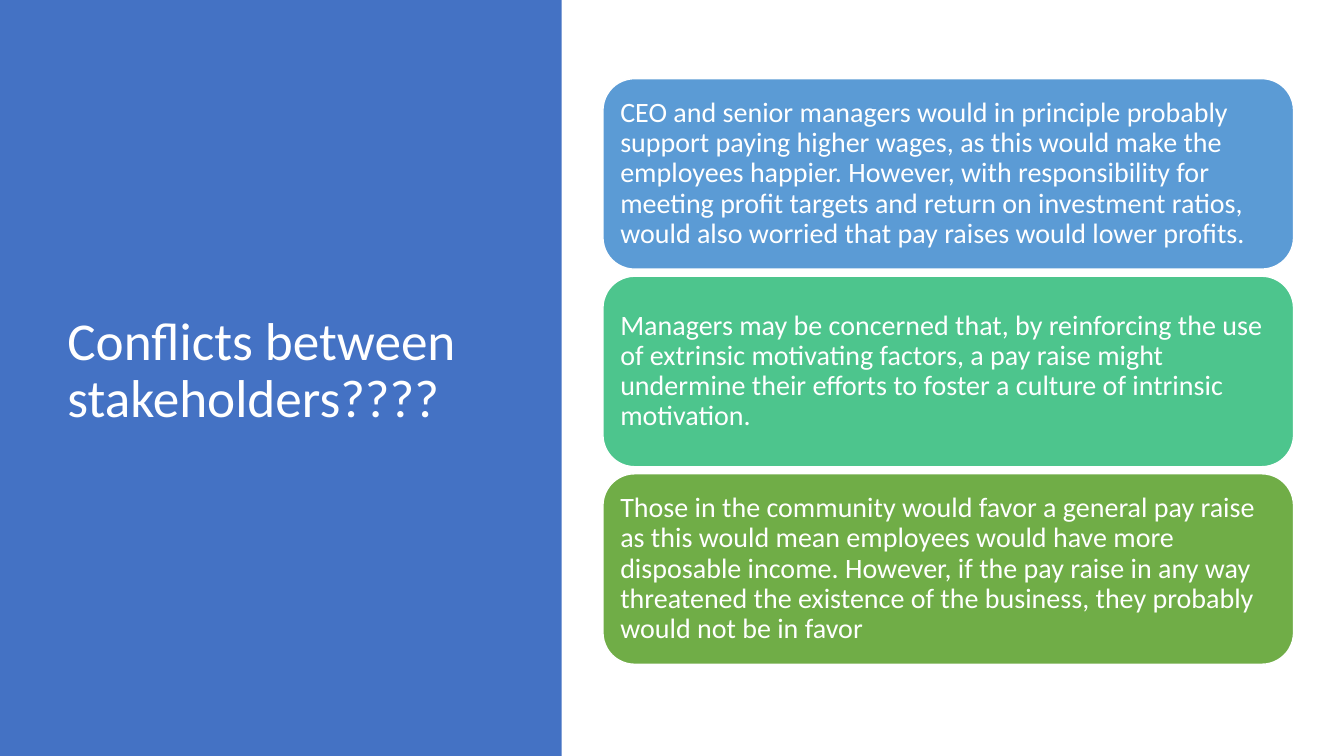
from dataclasses import dataclass

from pptx import Presentation
from pptx.dml.color import RGBColor
from pptx.enum.shapes import MSO_SHAPE
from pptx.enum.text import MSO_ANCHOR, PP_ALIGN
from pptx.shapes.autoshape import Shape
from pptx.slide import Slide
from pptx.util import Emu, Pt

EMU_PER_PX = 9144
WHITE = RGBColor(0xFF, 0xFF, 0xFF)
PANEL_BLUE = RGBColor(0x44, 0x72, 0xC4)
LIGHT_BLUE = RGBColor(0x5B, 0x9B, 0xD5)
TEAL = RGBColor(0x4D, 0xC5, 0x8D)
GREEN = RGBColor(0x70, 0xAD, 0x47)

CARD_LEFT, CARD_TOP, CARD_WIDTH, CARD_HEIGHT, CARD_PITCH = 598, 78, 685, 189, 196


@dataclass(frozen=True)
class Box:
    left: int
    top: int
    width: int
    height: int

    def emu(self) -> list[Emu]:
        return [px(n) for n in (self.left, self.top, self.width, self.height)]


@dataclass(frozen=True)
class StakeholderCard:
    color: RGBColor
    text: str


CARDS = (
    StakeholderCard(
        LIGHT_BLUE,
        "CEO and senior managers would in principle probably support paying higher wages, "
        "as this would make the employees happier. However, with responsibility for meeting "
        "profit targets and return on investment ratios, would also worried that pay raises "
        "would lower profits.",
    ),
    StakeholderCard(
        TEAL,
        "Managers may be concerned that, by reinforcing the use of extrinsic motivating "
        "factors, a pay raise might undermine their efforts to foster a culture of "
        "intrinsic motivation.",
    ),
    StakeholderCard(
        GREEN,
        "Those in the community would favor a general pay raise as this would mean employees "
        "would have more disposable income. However, if the pay raise in any way threatened "
        "the existence of the business, they probably would not be in favor",
    ),
)


def px(length: int) -> Emu:
    return Emu(length * EMU_PER_PX)


def set_attributes(target: object, values: dict[str, object]) -> None:
    for name, value in values.items():
        setattr(target, name, value)


def write_text(shape: Shape, text: str, size: int, inset_x: int, inset_y: int) -> None:
    frame = shape.text_frame
    set_attributes(frame, {
        "word_wrap": True,
        "vertical_anchor": MSO_ANCHOR.MIDDLE,
        "margin_left": px(inset_x),
        "margin_right": px(inset_x),
        "margin_top": px(inset_y),
        "margin_bottom": px(inset_y),
    })
    paragraph = frame.paragraphs[0]
    set_attributes(paragraph, {"alignment": PP_ALIGN.LEFT, "line_spacing": 0.9})
    run = paragraph.add_run()
    run.text = text
    set_attributes(run.font, {"name": "Calibri", "size": Pt(size)})
    run.font.color.rgb = WHITE


def add_filled_shape(slide: Slide, kind: MSO_SHAPE, box: Box, color: RGBColor) -> Shape:
    shape = slide.shapes.add_shape(kind, *box.emu())
    shape.shadow.inherit = False
    shape.fill.solid()
    shape.fill.fore_color.rgb = color
    shape.line.fill.background()
    return shape


def add_card(slide: Slide, card: StakeholderCard, index: int) -> None:
    box = Box(CARD_LEFT, CARD_TOP + index * CARD_PITCH, CARD_WIDTH, CARD_HEIGHT)
    shape = add_filled_shape(slide, MSO_SHAPE.ROUNDED_RECTANGLE, box, card.color)
    shape.line.color.rgb = WHITE
    shape.line.width = Pt(1)
    write_text(shape, card.text, 20, 8, 8)


def main() -> None:
    """Build the stakeholder conflicts slide and save it."""
    presentation = Presentation()
    set_attributes(presentation, {"slide_width": px(1333), "slide_height": px(750)})
    slide = presentation.slides.add_slide(presentation.slide_layouts[6])
    add_filled_shape(slide, MSO_SHAPE.RECTANGLE, Box(0, 0, 557, 750), PANEL_BLUE)
    title = slide.shapes.add_textbox(*Box(57, 68, 416, 602).emu())
    write_text(title, "Conflicts between stakeholders????", 38, 10, 5)
    for index, card in enumerate(CARDS):
        add_card(slide, card, index)
    presentation.save("out.pptx")


if __name__ == "__main__":
    main()
